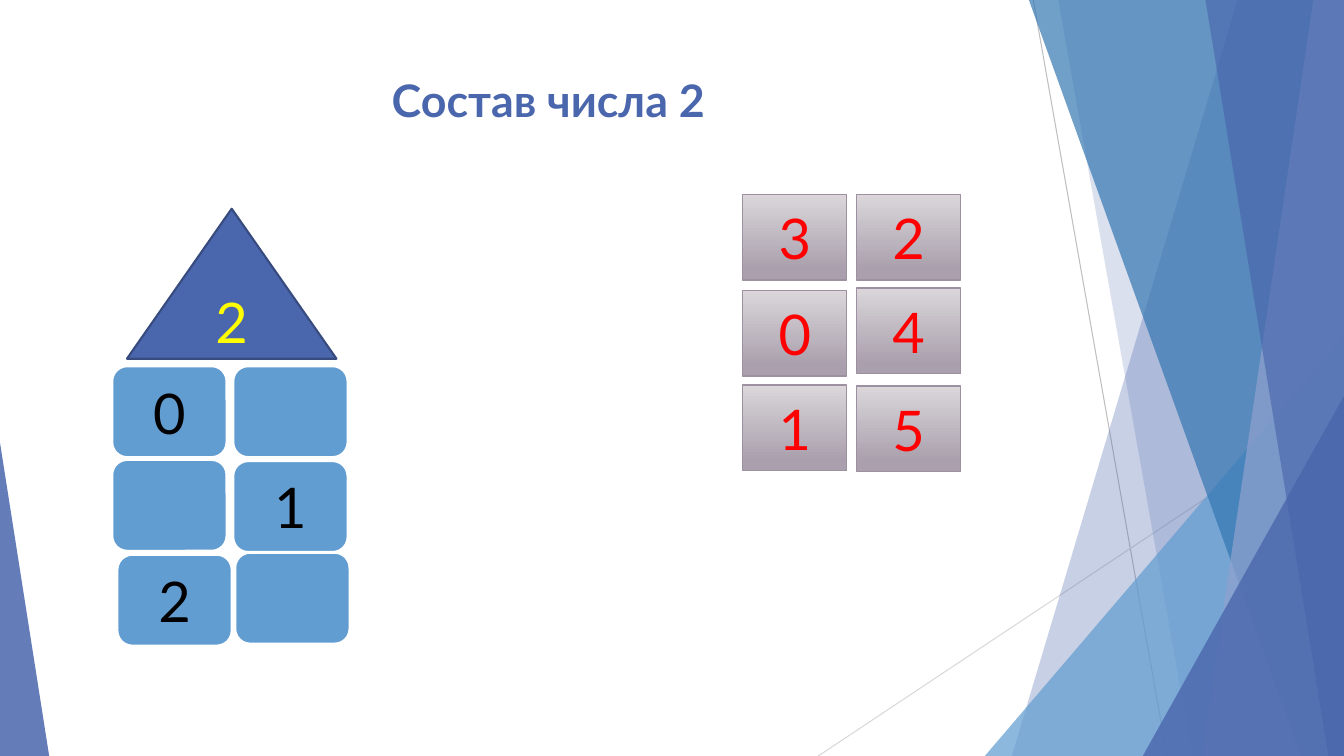
from lxml import etree
from pptx import Presentation
from pptx.dml.color import RGBColor
from pptx.enum.shapes import MSO_CONNECTOR, MSO_SHAPE
from pptx.enum.text import MSO_ANCHOR, PP_ALIGN
from pptx.oxml.ns import qn
from pptx.util import Cm, Pt

STRAIGHT = MSO_CONNECTOR.STRAIGHT
TRIANGLE = MSO_SHAPE.ISOSCELES_TRIANGLE
RECTANGLE = MSO_SHAPE.RECTANGLE
ROUNDED = MSO_SHAPE.ROUNDED_RECTANGLE
CENTER = PP_ALIGN.CENTER
TOP = MSO_ANCHOR.TOP
MIDDLE = MSO_ANCHOR.MIDDLE

FONT = "Lato"
WIDTH, HEIGHT = 33.87, 19.05
BLUE, LIGHT_BLUE = "4A66AC", "629DD1"

# start x, start y, end x, end y, colour
BACKDROP_LINES = [
    (26.04, 0, 29.41, HEIGHT, "BFBFBF"),
    (WIDTH, 10.24, 20.62, HEIGHT, "D9D9D9"),
]
# left edge at the top, left edge at the bottom, colour, opacity in percent
BACK_PANELS = [(31.19, 25.5, BLUE, 30), (26.67, 30.05, BLUE, 20)]
FRONT_PANELS = [
    (25.93, 32.79, "3477B2", 70),
    (33.1, 30.28, "90A2CF", 70),
    (30.38, 33.48, BLUE, 65),
]
BLOCK_SIZE = (2.9, 2.31)
BLOCKS = [
    ("", 5.92, 13.92), ("", 2.82, 11.58), ("", 5.87, 9.22),
    ("0", 2.82, 9.22), ("1", 5.87, 11.61), ("2", 2.95, 13.97),
]
CARD_SIZE = (2.62, 2.16)
CARDS = [
    ("3", 18.72, 4.9), ("2", 21.59, 4.9),
    ("0", 18.72, 7.32), ("4", 21.59, 7.26),
    ("1", 18.72, 9.7), ("5", 21.59, 9.73),
]


def rgb(color):
    return RGBColor.from_string(color)


def fill_translucent(shape, color, opacity):
    shape.shadow.inherit = False
    shape.line.fill.background()
    shape.fill.solid()
    shape.fill.fore_color.rgb = rgb(color)
    color_element = shape.fill._xPr.find(".//" + qn("a:srgbClr"))
    etree.SubElement(color_element, qn("a:alpha")).set("val", str(opacity * 1000))


def add_line(slide, start_x, start_y, end_x, end_y, color):
    line = slide.shapes.add_connector(
        STRAIGHT, Cm(start_x), Cm(start_y), Cm(end_x), Cm(end_y))
    line.line.color.rgb = rgb(color)
    line.line.width = Pt(0.75)
    etree.SubElement(line._element.spPr, qn("a:effectLst"))


def add_panel(slide, top_x, bottom_x, color, opacity):
    """Add a full-height panel that reaches the right edge of the slide."""
    builder = slide.shapes.build_freeform(Cm(top_x), 0)
    corners = [(WIDTH, 0), (WIDTH, HEIGHT), (bottom_x, HEIGHT)]
    builder.add_line_segments([(Cm(x), Cm(y)) for x, y in corners])
    fill_translucent(builder.convert_to_shape(), color, opacity)


def add_corner(slide, left, top, width, apex, color, opacity):
    """Add a triangle that stands on the bottom edge of the slide."""
    corner = slide.shapes.add_shape(
        TRIANGLE, Cm(left), Cm(top), Cm(width), Cm(HEIGHT - top))
    corner.adjustments[0] = apex
    fill_translucent(corner, color, opacity)


def add_backdrop(slide):
    for line in BACKDROP_LINES:
        add_line(slide, *line)
    for panel in BACK_PANELS:
        add_panel(slide, *panel)
    add_corner(slide, 24.82, 8.46, 9.05, 1, LIGHT_BLUE, 72)
    for panel in FRONT_PANELS:
        add_panel(slide, *panel)
    add_corner(slide, 28.8, 9.98, 5.07, 1, BLUE, 80)
    add_corner(slide, 0, 11.15, 1.24, 0, BLUE, 85)


def write_text(shape, text, size, color, anchor):
    shape.text_frame.text = text
    shape.text_frame.word_wrap = True
    shape.text_frame.vertical_anchor = anchor
    paragraph = shape.text_frame.paragraphs[0]
    paragraph.alignment = CENTER
    paragraph.font.name = FONT
    paragraph.font.size = Pt(size)
    paragraph.font.color.rgb = rgb(color)
    return paragraph


def set_title(slide, text):
    title = slide.shapes.title
    title.left, title.top = Cm(1.88), Cm(1.7)
    title.width, title.height = Cm(23.88), Cm(3.66)
    write_text(title, text, 32, BLUE, TOP).font.bold = True


def add_number(slide, kind, box, text, text_color, line_color, line_width):
    shape = slide.shapes.add_shape(kind, *[Cm(length) for length in box])
    shape.shadow.inherit = False
    shape.line.color.rgb = rgb(line_color)
    shape.line.width = Pt(line_width)
    if text:
        write_text(shape, text, 40, text_color, MIDDLE)
    return shape


def fill_solid(shape, color):
    shape.fill.solid()
    shape.fill.fore_color.rgb = rgb(color)


def fill_gradient(shape, stops):
    """Fill from top to bottom with (position, colour) stops."""
    shape.fill.gradient()
    shape.fill.gradient_angle = 270
    for stop, (position, color) in zip(shape.fill.gradient_stops, stops):
        stop.position = position
        stop.color.rgb = rgb(color)


def main():
    presentation = Presentation()
    presentation.slide_width = Cm(WIDTH)
    presentation.slide_height = Cm(HEIGHT)
    slide = presentation.slides.add_slide(presentation.slide_layouts[5])

    add_backdrop(slide)
    set_title(slide, "Состав числа 2")

    for text, left, top in BLOCKS:
        block = add_number(slide, ROUNDED, (left, top, *BLOCK_SIZE),
                           text, "000000", "FFFFFF", 2)
        fill_solid(block, LIGHT_BLUE)

    roof = add_number(slide, TRIANGLE, (3.2, 5.26, 5.28, 3.78),
                      "2", "FFFF00", "374B7F", 1.5)
    fill_solid(roof, BLUE)

    for text, left, top in CARDS:
        card = add_number(slide, RECTANGLE, (left, top, *CARD_SIZE),
                          text, "FF0000", "9D90A0", 1)
        fill_gradient(card, [(0, "DAD6DA"), (0.88, "AAA0AD")])

    presentation.save("out.pptx")


if __name__ == "__main__":
    main()
